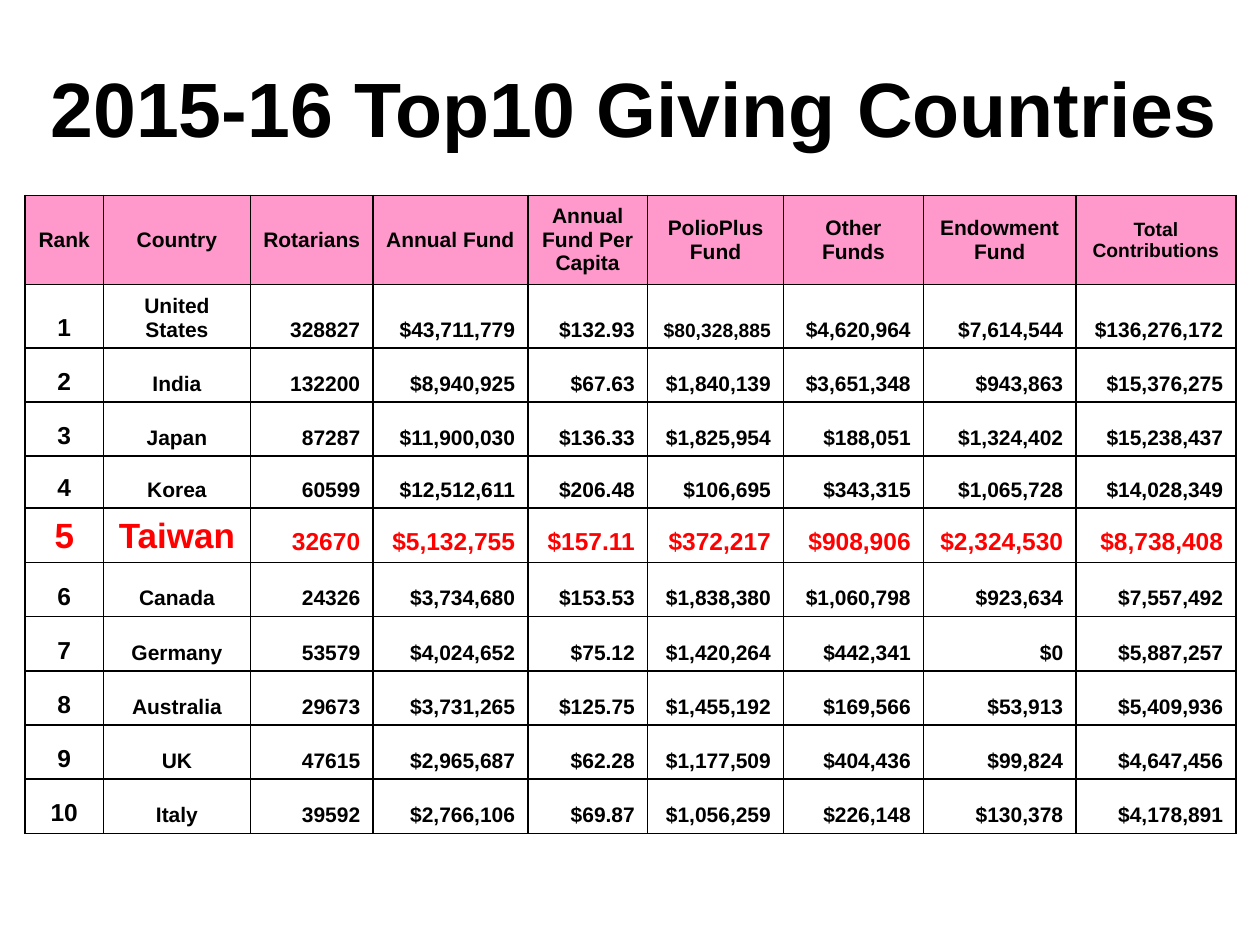
"""Build a slide with a table of the top ten giving countries in 2015-16."""
from lxml import etree
from pptx import Presentation
from pptx import util as u
from pptx.dml.color import RGBColor
from pptx.enum import text
from pptx.oxml.ns import qn

TITLE = "2015-16 Top10 Giving Countries"
HEADERS = ["Rank", "Country", "Rotarians", "Annual Fund", "Annual Fund Per Capita",
           "PolioPlus Fund", "Other Funds", "Endowment Fund", "Total Contributions"]
COUNTRIES = [
    ("1", "United States", "328827", "$43,711,779", "$132.93",
     "$80,328,885", "$4,620,964", "$7,614,544", "$136,276,172"),
    ("2", "India", "132200", "$8,940,925", "$67.63",
     "$1,840,139", "$3,651,348", "$943,863", "$15,376,275"),
    ("3", "Japan", "87287", "$11,900,030", "$136.33",
     "$1,825,954", "$188,051", "$1,324,402", "$15,238,437"),
    ("4", "Korea", "60599", "$12,512,611", "$206.48",
     "$106,695", "$343,315", "$1,065,728", "$14,028,349"),
    ("5", "Taiwan", "32670", "$5,132,755", "$157.11",
     "$372,217", "$908,906", "$2,324,530", "$8,738,408"),
    ("6", "Canada", "24326", "$3,734,680", "$153.53",
     "$1,838,380", "$1,060,798", "$923,634", "$7,557,492"),
    ("7", "Germany", "53579", "$4,024,652", "$75.12",
     "$1,420,264", "$442,341", "$0", "$5,887,257"),
    ("8", "Australia", "29673", "$3,731,265", "$125.75",
     "$1,455,192", "$169,566", "$53,913", "$5,409,936"),
    ("9", "UK", "47615", "$2,965,687", "$62.28",
     "$1,177,509", "$404,436", "$99,824", "$4,647,456"),
    ("10", "Italy", "39592", "$2,766,106", "$69.87",
     "$1,056,259", "$226,148", "$130,378", "$4,178,891"),
]
COLORS = {"text": "000000", "highlight": "FF0000", "header": "FF99CC",
          "paper": "FFFFFF", "border": "000000"}
COLUMN_WIDTHS = [0.62, 1.17, 0.97, 1.23, 0.95, 1.08, 1.11, 1.21, 1.27]
ROW_HEIGHTS = [0.71] + [0.43] * 3 + [0.41, 0.42] + [0.43] * 5
HIGHLIGHT_ROW = 5
SMALL_CELLS = {(0, 8), (1, 5)}


def write(frame, content, size, color, align):
    paragraph = frame.paragraphs[0]
    paragraph.text = content
    paragraph.alignment = align
    font = paragraph.runs[0].font
    font.name = "Arial"
    font.size = u.Pt(size)
    font.bold = True
    font.color.rgb = RGBColor.from_string(COLORS[color])


def add_borders(cell):
    properties = cell._tc.get_or_add_tcPr()
    for index, side in enumerate(("lnL", "lnR", "lnT", "lnB")):
        line = etree.Element(qn(f"a:{side}"), w=str(u.Pt(1)))
        fill = etree.SubElement(line, qn("a:solidFill"))
        etree.SubElement(fill, qn("a:srgbClr"), val=COLORS["border"])
        properties.insert(index, line)


def cell_size(row, column):
    if (row, column) in SMALL_CELLS:
        return 11
    if row == HIGHLIGHT_ROW:
        return 20 if column < 2 else 14
    return 14 if row and column == 0 else 12


def add_title(page):
    box = page.shapes.add_textbox(u.Inches(0.27), u.Inches(0.3), u.Inches(9.53), u.Inches(1.09))
    box.fill.solid()
    box.fill.fore_color.rgb = RGBColor.from_string(COLORS["paper"])
    box.text_frame.word_wrap = True
    box.text_frame.vertical_anchor = text.MSO_ANCHOR.MIDDLE
    write(box.text_frame, TITLE, 44, "text", text.PP_ALIGN.CENTER)


def add_giving_table(page):
    records = [HEADERS, *COUNTRIES]
    table = page.shapes.add_table(
        len(records), len(HEADERS), u.Inches(0.2), u.Inches(1.55),
        u.Inches(sum(COLUMN_WIDTHS)), u.Inches(sum(ROW_HEIGHTS))).table
    for column, width in zip(table.columns, COLUMN_WIDTHS):
        column.width = u.Inches(width)
    for row, height in zip(table.rows, ROW_HEIGHTS):
        row.height = u.Inches(height)
    for row, record in enumerate(records):
        for column, content in enumerate(record):
            cell = table.cell(row, column)
            centered = row == 0 or column < 2
            cell.vertical_anchor = text.MSO_ANCHOR.BOTTOM if row else text.MSO_ANCHOR.MIDDLE
            cell.fill.solid()
            cell.fill.fore_color.rgb = RGBColor.from_string(COLORS["paper" if row else "header"])
            add_borders(cell)
            write(cell.text_frame, content, cell_size(row, column),
                  "highlight" if row == HIGHLIGHT_ROW else "text",
                  text.PP_ALIGN.CENTER if centered else text.PP_ALIGN.RIGHT)


def main():
    deck = Presentation()
    deck.slide_width, deck.slide_height = u.Inches(10), u.Inches(7.5)
    page = deck.slides.add_slide(deck.slide_layouts[6])
    add_title(page)
    add_giving_table(page)
    deck.save("out.pptx")


if __name__ == "__main__":
    main()
